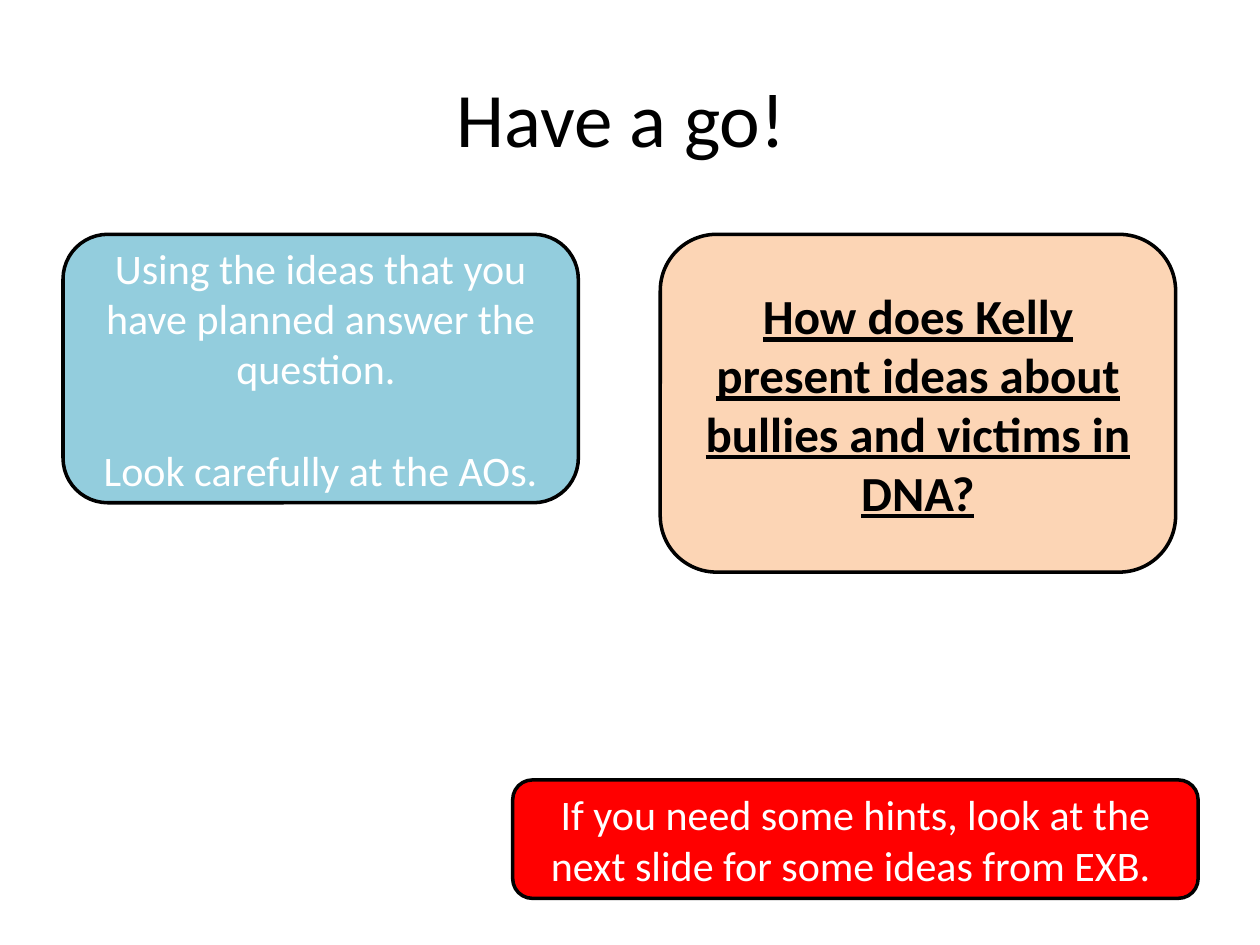
"""Build the "Have a go!" task slide."""
from dataclasses import dataclass

from pptx import Presentation
from pptx.dml.color import RGBColor
from pptx.enum.shapes import MSO_SHAPE as Shape
from pptx.enum.text import MSO_ANCHOR as Anchor, PP_ALIGN as Align
from pptx.util import Pt

COLORS = {
    "black": "000000",
    "white": "FFFFFF",
    "blue": "93CDDD",
    "peach": "FCD5B5",
    "red": "FF0000",
}
FONT = "Calibri"


@dataclass
class Card:
    left: float
    top: float
    width: float
    height: float
    fill: str
    paragraphs: tuple[str, ...]
    size: float = 24
    color: str = "white"
    strong: bool = False
    gap: float = 0


CARDS = (
    Card(36, 133.9, 294.5, 153.4, "blue",
         ("Using the ideas that you have planned answer the question. ",
          "Look carefully at the AOs."), gap=29.3),
    Card(377.3, 133.9, 294.5, 193, "peach",
         ("How does Kelly present ideas about bullies and victims in DNA?",),
         size=28, color="black", strong=True),
    Card(293, 445.7, 391.7, 67.7, "red",
         ("If you need some hints, look at the next slide for some ideas from EXB. ",)),
)


def rgb(name: str) -> RGBColor:
    return RGBColor.from_string(COLORS[name])


def add_run(p, text: str, size: float, color: str, strong: bool = False) -> None:
    p.alignment = Align.CENTER
    r = p.add_run()
    r.text = text
    r.font.name = FONT
    r.font.size = Pt(size)
    r.font.color.rgb = rgb(color)
    if strong:
        r.font.bold = r.font.underline = True


def add_title(slide, text: str) -> None:
    sp = slide.shapes.title
    sp.left, sp.top, sp.width, sp.height = Pt(36), Pt(21.6), Pt(648), Pt(90)
    tf = sp.text_frame
    tf.vertical_anchor = Anchor.MIDDLE
    add_run(tf.paragraphs[0], text, 44, "black")


def add_card(slide, card: Card) -> None:
    sp = slide.shapes.add_shape(Shape.ROUNDED_RECTANGLE, Pt(card.left), Pt(card.top),
                                Pt(card.width), Pt(card.height))
    sp.shadow.inherit = False
    sp.fill.solid()
    sp.fill.fore_color.rgb = rgb(card.fill)
    sp.line.color.rgb = rgb("black")
    sp.line.width = Pt(2)
    tf = sp.text_frame
    tf.word_wrap = True
    tf.vertical_anchor = Anchor.MIDDLE
    for i, text in enumerate(card.paragraphs):
        p = tf.add_paragraph() if i else tf.paragraphs[0]
        if i:
            p.space_before = Pt(card.gap)
        add_run(p, text, card.size, card.color, card.strong)


def main() -> None:
    prs = Presentation()
    prs.slide_width, prs.slide_height = Pt(720), Pt(540)
    slide = prs.slides.add_slide(prs.slide_layouts.get_by_name("Title Only"))
    add_title(slide, "Have a go! ")
    for card in CARDS:
        add_card(slide, card)
    prs.save("out.pptx")


if __name__ == "__main__":
    main()
